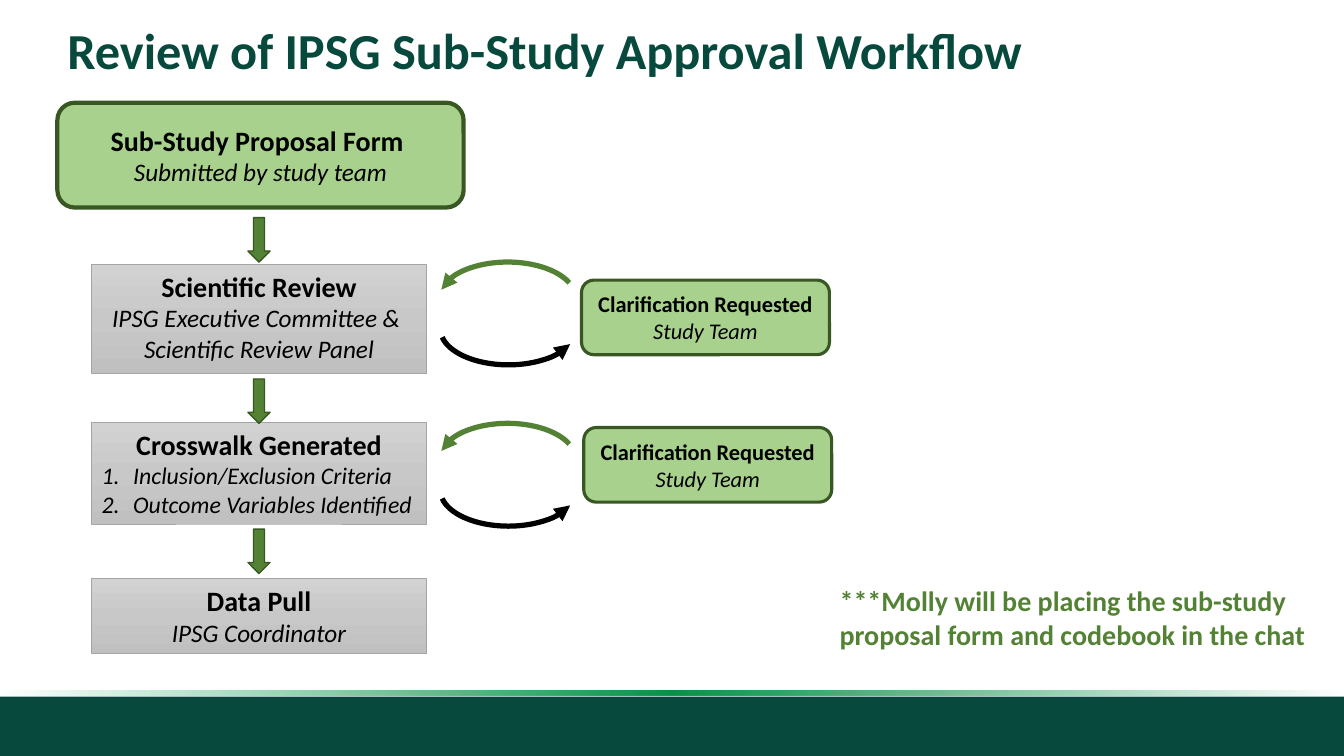
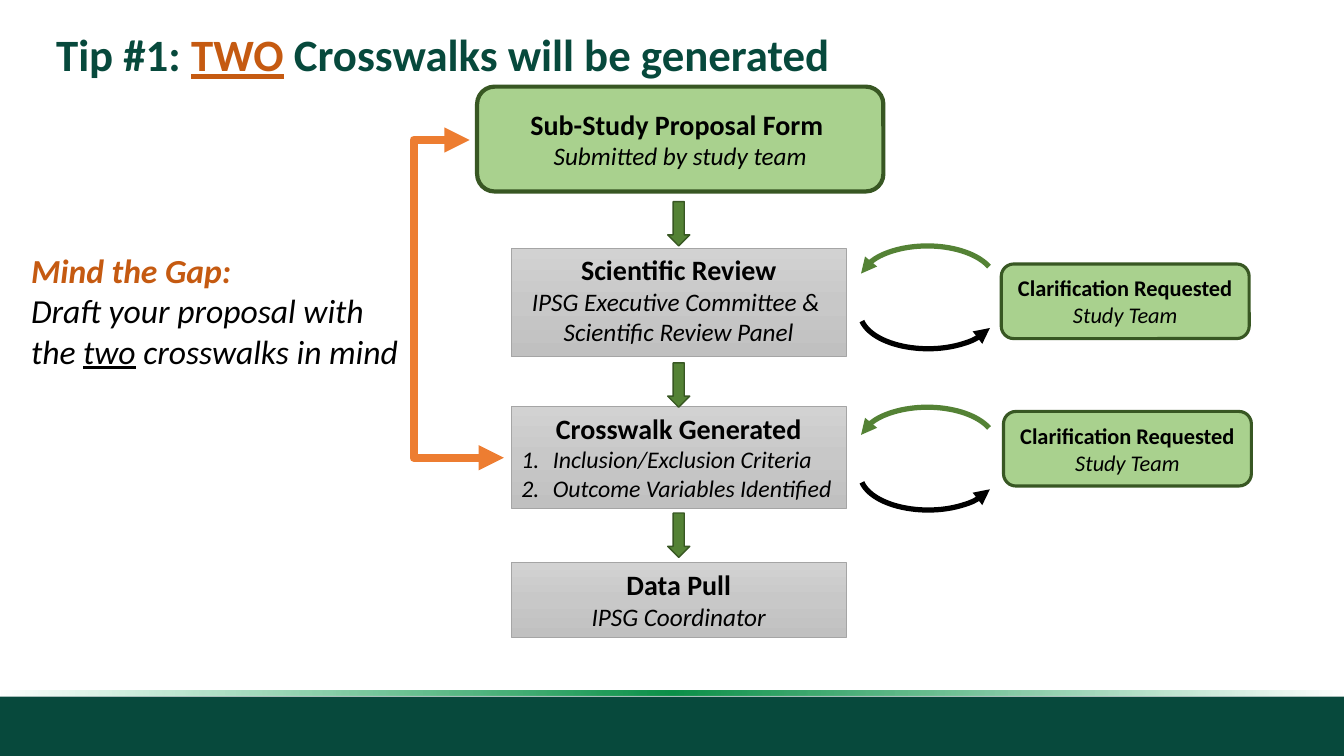
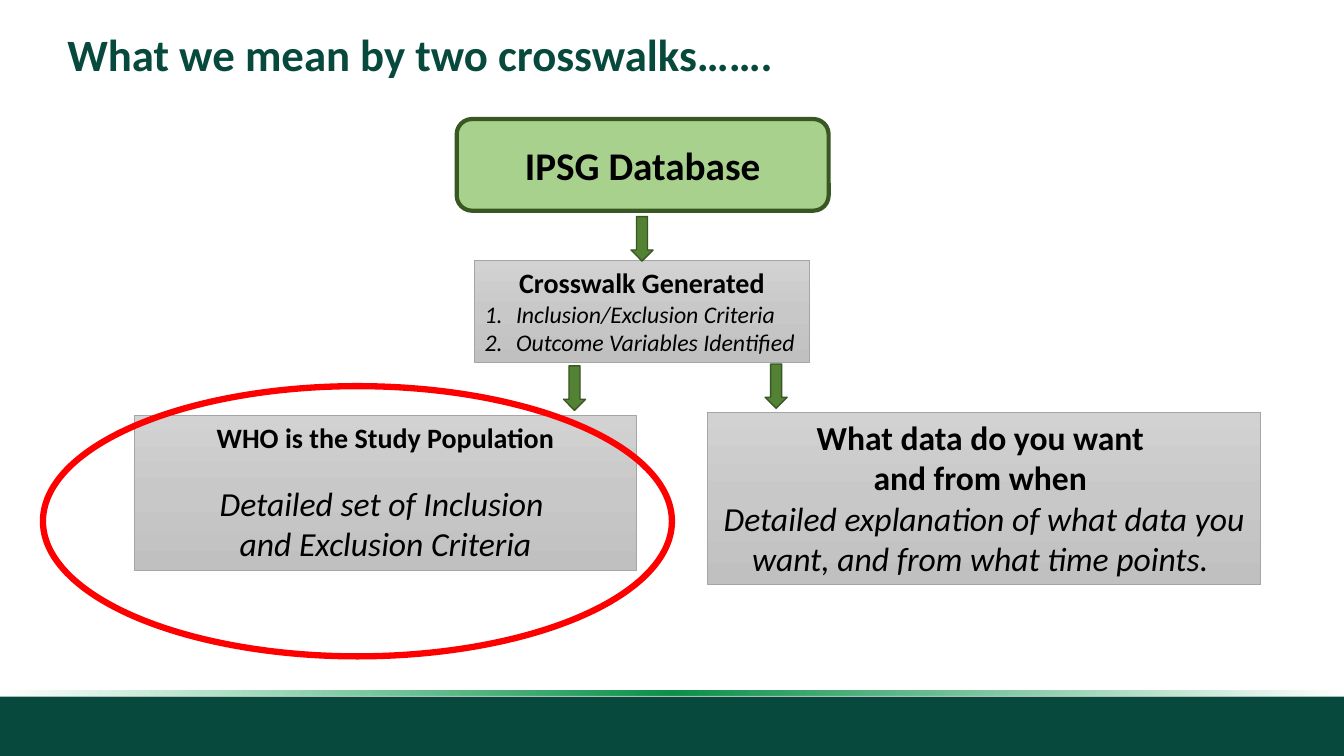
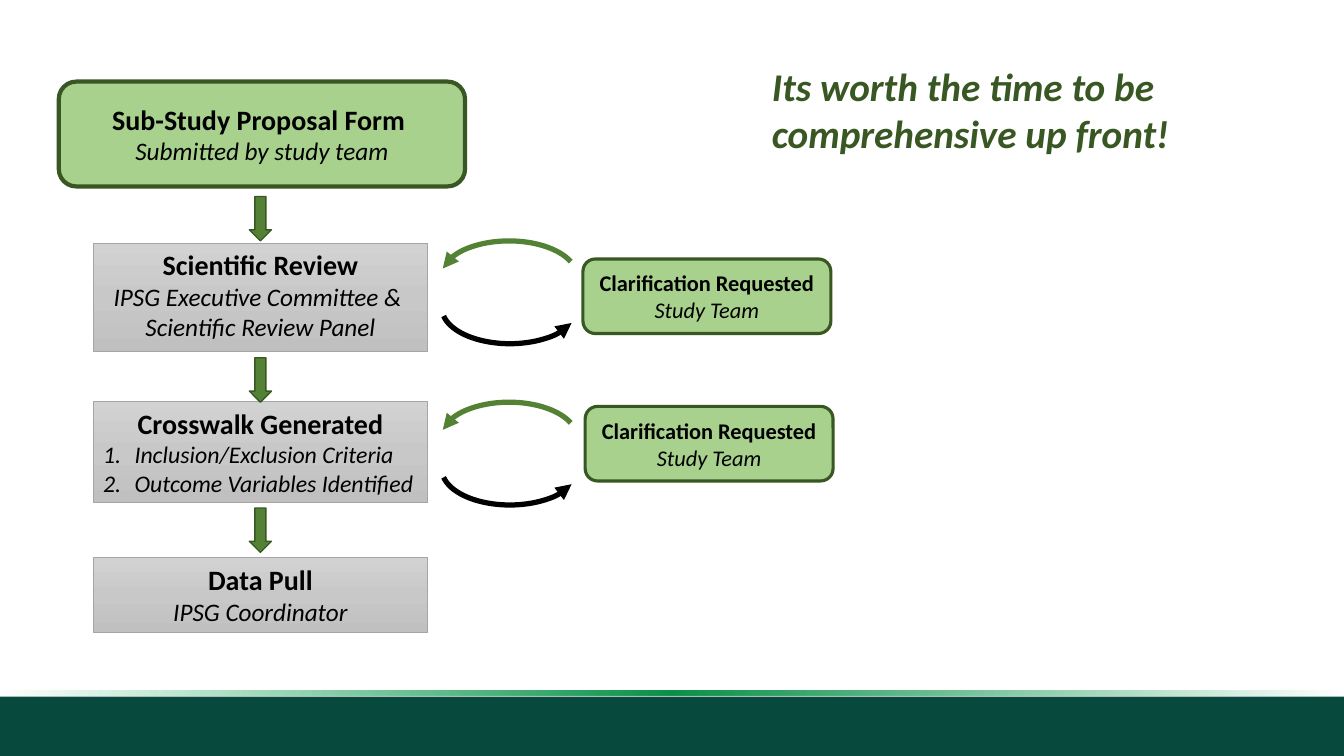
import dataclasses

import lxml.etree
import pptx
import pptx.dml.color
import pptx.enum.shapes
import pptx.enum.text
import pptx.oxml.ns
import pptx.util

Pt = pptx.util.Pt
qn = pptx.oxml.ns.qn
SHAPE = pptx.enum.shapes.MSO_SHAPE
ALIGN = pptx.enum.text.PP_ALIGN
ANCHOR = pptx.enum.text.MSO_ANCHOR

FONT = "Calibri"
WIDTH, HEIGHT = 960, 540
BAND_TOP = 497.5
COLORS = {
    "title": "07493C",
    "text": "000000",
    "light green": "A9D18E",
    "green": "548235",
    "dark green": "385723",
    "gray line": "A5A5A5",
    "orange": "ED7D31",
    "dark orange": "C55A11",
    "red": "FF0000",
}
GRAY_STOPS = [(0, "D2D2D2", 100), (50, "C8C8C8", 100), (100, "C0C0C0", 100)]
BAND_STOPS = [(0, "0D9D4F", 0), (50, "0C9049", 100), (100, "0FAB56", 0)]

STEP_WIDTH = 239
CROSSWALK_HEIGHT = 72.7
LOOP_PITCH = 115.2


@dataclasses.dataclass
class Line:
    """One paragraph; runs pair a text with its own colour, or None, and underline."""
    text: str = ""
    size: float = 20
    bold: bool = False
    italic: bool = False
    color: str = "text"
    align: object = None
    numbered: bool = False
    space_before: float = 0
    spacing: float = 1
    runs: tuple = ()


def heading(text, size=20):
    return Line(text, size, bold=True, align=ALIGN.CENTER)


def detail(text, size=18, space_before=0):
    return Line(text, size, italic=True, align=ALIGN.CENTER, space_before=space_before)


def numbered(text):
    return Line(text, 17, italic=True, numbered=True)


CROSSWALK = [
    heading("Crosswalk Generated"),
    numbered("Inclusion/Exclusion Criteria"),
    numbered("Outcome Variables Identified"),
]


def rgb(name):
    return pptx.dml.color.RGBColor.from_string(COLORS[name])


def write(frame, lines, anchor):
    frame.word_wrap = True
    frame.vertical_anchor = anchor
    for index, line in enumerate(lines):
        paragraph = frame.add_paragraph() if index else frame.paragraphs[0]
        paragraph.alignment = line.align or ALIGN.LEFT
        paragraph.line_spacing = line.spacing
        if line.space_before:
            paragraph.space_before = Pt(line.space_before)
        if line.numbered:
            properties = paragraph._p.get_or_add_pPr()
            properties.set("marL", str(Pt(22.5)))
            properties.set("indent", str(-Pt(22.5)))
            lxml.etree.SubElement(properties, qn("a:buFont"), typeface="+mj-lt")
            lxml.etree.SubElement(properties, qn("a:buAutoNum"), type="arabicPeriod")
        font = paragraph.font
        font.name = FONT
        font.size = Pt(line.size)
        font.bold = line.bold
        font.italic = line.italic
        font.color.rgb = rgb(line.color)
        for text, color, underline in line.runs or ((line.text, None, False),):
            run = paragraph.add_run()
            run.text = text
            if color:
                run.font.color.rgb = rgb(color)
            if underline:
                run.font.underline = True


def add_text(slide, left, top, width, height, lines, anchor=ANCHOR.TOP):
    box = slide.shapes.add_textbox(Pt(left), Pt(top), Pt(width), Pt(height))
    write(box.text_frame, lines, anchor)


def add_title(slide, left, top, line):
    line.bold, line.color, line.spacing = True, "title", 0.9
    add_text(slide, left, top, 828, 47.5, [line], ANCHOR.MIDDLE)


def add_shape(slide, kind, left, top, width, height, fill=None, line=None, weight=1):
    shape = slide.shapes.add_shape(kind, Pt(left), Pt(top), Pt(width), Pt(height))
    shape.shadow.inherit = False
    if fill:
        shape.fill.solid()
        shape.fill.fore_color.rgb = rgb(fill)
    else:
        shape.fill.background()
    if line:
        shape.line.color.rgb = rgb(line)
        shape.line.width = Pt(weight)
    else:
        shape.line.fill.background()
    return shape


def set_gradient(shape, stops, angle):
    shape.fill.gradient()
    shape.fill.gradient_angle = angle
    stop_list = shape.element.spPr.find(qn("a:gradFill")).find(qn("a:gsLst"))
    for old_stop in list(stop_list):
        stop_list.remove(old_stop)
    for position, color, opacity in stops:
        stop = lxml.etree.SubElement(stop_list, qn("a:gs"), pos=str(position * 1000))
        value = lxml.etree.SubElement(stop, qn("a:srgbClr"), val=color)
        if opacity < 100:
            lxml.etree.SubElement(value, qn("a:alpha"), val=str(opacity * 1000))


def add_arrowheads(shape, *ends):
    outline = shape.element.spPr.find(qn("a:ln"))
    for end in ends:
        lxml.etree.SubElement(outline, qn(f"a:{end}"), type="triangle")


def add_step(slide, left, top, width, height, lines):
    step = add_shape(slide, SHAPE.RECTANGLE, left, top, width, height,
                     line="gray line", weight=0.5)
    set_gradient(step, GRAY_STOPS, 270)
    write(step.text_frame, lines, ANCHOR.TOP)


def add_green_box(slide, left, top, width, height, weight, lines):
    box = add_shape(slide, SHAPE.ROUNDED_RECTANGLE, left, top, width, height,
                    "light green", "dark green", weight)
    write(box.text_frame, lines, ANCHOR.MIDDLE)


def add_down_arrow(slide, left, top):
    add_shape(slide, SHAPE.DOWN_ARROW, left, top, 15.8, 31.7, "green", "dark green")


def add_arc(slide, left, top, color, end, flipped=False):
    arc = add_shape(slide, SHAPE.ARC, left, top, 97.2, 51.1, line=color, weight=3.75)
    for index, degrees in enumerate((187, 346.3)):
        arc.adjustments[index] = degrees * 0.6
    if flipped:
        arc.element.spPr.find(qn("a:xfrm")).set("flipV", "1")
    add_arrowheads(arc, end)


def add_workflow(slide, left, top):
    """Approval chart whose first box has its corner at left, top."""
    step_left = left + 24.5
    add_step(slide, step_left, top + 115.2, STEP_WIDTH, 77.8, [
        heading("Scientific Review"),
        detail("IPSG Executive Committee & "),
        detail("Scientific Review Panel"),
    ])
    add_step(slide, step_left, top + 228.2, STEP_WIDTH, CROSSWALK_HEIGHT, CROSSWALK)
    add_step(slide, step_left, top + 339.8, STEP_WIDTH, 53.3,
             [heading("Data Pull"), detail("IPSG Coordinator")])
    for arrow_top in (82.1, 197.3, 304.6):
        add_down_arrow(slide, left + 136.1, top + arrow_top)
    add_green_box(slide, left, top, 290.2, 74.9, 3, [
        heading("Sub-Study Proposal Form "),
        detail("Submitted by study team"),
    ])
    for loop_top in (top + 113.8, top + 113.8 + LOOP_PITCH):
        add_arc(slide, left + 273, loop_top, "green", "headEnd")
        add_arc(slide, left + 273.6, loop_top + 22.3, "text", "tailEnd", flipped=True)
    for box_left, box_top in ((374.4, 126.7), (376, 232)):
        add_green_box(slide, left + box_left, top + box_top, 177.1, 53.3, 2.25,
                      [heading("Clarification Requested", 16), detail("Study Team", 16)])


def add_gap_bracket(slide):
    """Double-headed elbow that links the proposal form with the crosswalk."""
    left, top, right, bottom, spine = 335.5, 100, 360, 327, 295.5
    bracket = slide.shapes.add_connector(
        pptx.enum.shapes.MSO_CONNECTOR.ELBOW, Pt(left), Pt(top), Pt(right), Pt(bottom))
    bracket.line.color.rgb = rgb("orange")
    bracket.line.width = Pt(6)
    add_arrowheads(bracket, "headEnd", "tailEnd")
    properties = bracket.element.spPr
    lxml.etree.SubElement(properties, qn("a:effectLst"))
    bend = round((spine - left) / (right - left) * 100000)
    guides = properties.find(qn("a:prstGeom")).find(qn("a:avLst"))
    lxml.etree.SubElement(guides, qn("a:gd"), name="adj1", fmla=f"val {bend}")


def add_bands(layout, slide):
    """Draw the bottom bands on the slide, then move them to its layout."""
    band = add_shape(slide, SHAPE.RECTANGLE, 0, BAND_TOP, WIDTH, HEIGHT - BAND_TOP, "title")
    glow = add_shape(slide, SHAPE.RECTANGLE, 0, 493, WIDTH, 4)
    set_gradient(glow, BAND_STOPS, 180)
    for shape in (band, glow):
        layout.shapes.element.append(shape.element)


def build_review(slide):
    add_workflow(slide, 41, 73.4)
    add_title(slide, 41, 14.4, Line("Review of IPSG Sub-Study Approval Workflow", 36,
                                    align=ALIGN.JUSTIFY))
    add_text(slide, 592.6, 413.3, 389, 55.7, [
        Line("***Molly will be placing the sub-study proposal form and codebook in the chat",
             bold=True, color="green"),
    ])


def build_tip(slide):
    add_workflow(slide, 340.8, 61.9)
    add_gap_bracket(slide)
    add_text(slide, 15.1, 175, 283, 94.5, [
        Line("Mind the Gap:", 24, bold=True, italic=True, color="dark orange"),
        Line(size=24, italic=True, runs=(
            ("Draft your proposal with the ", None, False),
            ("two", None, True),
            (" crosswalks in mind", None, False),
        )),
    ])
    add_title(slide, 33, 17.3, Line(size=32, runs=(
        ("Tip #1: ", None, False),
        ("TWO", "dark orange", True),
        (" Crosswalks will be generated", None, False),
    )))


def build_crosswalks(slide):
    add_title(slide, 41, 17.3, Line("What we mean by two crosswalks…….", 32))
    add_green_box(slide, 326.2, 85, 265.7, 65.5, 3, [heading("IPSG Database", 28)])
    add_step(slide, 339, 186.3, STEP_WIDTH, CROSSWALK_HEIGHT, CROSSWALK)
    add_step(slide, 505.4, 294.2, 395, 123.5, [
        heading("What data do you want ", 24),
        heading("and from when ", 24),
        detail("Detailed explanation of what data you want, and from what time points. ", 24),
    ])
    add_step(slide, 96, 297, 358.7, 110.5, [
        heading("WHO is the Study Population"),
        detail("Detailed set of Inclusion ", 24, space_before=20.5),
        detail("and Exclusion Criteria", 24),
    ])
    for left, top in ((450.7, 154.8), (402.5, 261.4), (546.5, 260)):
        add_down_arrow(slide, left, top)
    add_shape(slide, SHAPE.OVAL, 30.7, 275.8, 449.3, 193, line="red", weight=4.5)


def build_closing(slide):
    add_workflow(slide, 42, 58.3)
    add_text(slide, 544.3, 41, 399, 75, [
        Line("Its worth the time to be comprehensive up front!", 28,
             bold=True, italic=True, color="dark green"),
    ])


def main():
    presentation = pptx.Presentation()
    presentation.slide_width, presentation.slide_height = Pt(WIDTH), Pt(HEIGHT)
    layout = presentation.slide_layouts[6]
    builders = (build_review, build_tip, build_crosswalks, build_closing)
    slides = [presentation.slides.add_slide(layout) for _ in builders]
    add_bands(layout, slides[0])
    for build, slide in zip(builders, slides):
        build(slide)
    presentation.save("out.pptx")


if __name__ == "__main__":
    main()
